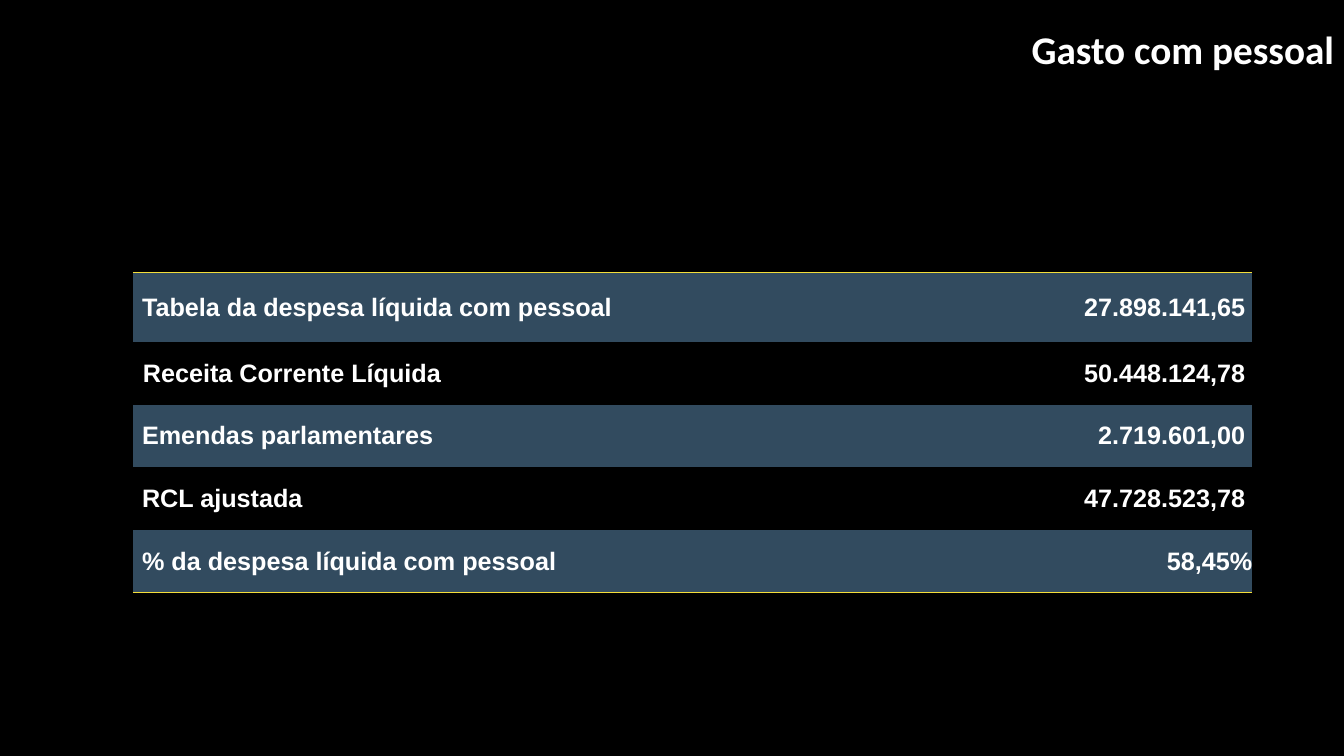
import pptx
import pptx.dml.color
import pptx.enum.text
import pptx.oxml
import pptx.oxml.ns
import pptx.util

Cm = pptx.util.Cm
ALIGN = pptx.enum.text.PP_ALIGN
MIDDLE = pptx.enum.text.MSO_ANCHOR.MIDDLE
COLORS = {"background": "000000", "text": "FFFFFF", "band": "324B5F", "rule": "F4DE3A"}
PLAIN_TABLE_STYLE = "{2D5ABB26-0587-4C30-8999-92F81FD0307C}"

# Label, value, left margin and right margin in centimetres
EXPENSE_ROWS = [
    ("Tabela da despesa líquida com pessoal", "27.898.141,65", 0.23, 0.18),
    ("Receita Corrente Líquida", "50.448.124,78", 0.25, 0.18),
    ("Emendas parlamentares", "2.719.601,00", 0.23, 0.18),
    ("RCL ajustada", "47.728.523,78", 0.23, 0.18),
    ("% da despesa líquida com pessoal", "58,45%", 0.23, 0),
]


def color(name):
    return pptx.dml.color.RGBColor.from_string(COLORS[name])


def write_text(frame, text, size=18, font="Arial", align=ALIGN.LEFT):
    paragraph = frame.paragraphs[0]
    paragraph.alignment = align
    run = paragraph.add_run()
    run.text = text
    run.font.size = pptx.util.Pt(size)
    run.font.name = font
    run.font.bold = True
    run.font.color.rgb = color("text")


class SlideBuilder:
    def __init__(self, presentation):
        self.slide = presentation.slides.add_slide(presentation.slide_layouts[5])
        background = self.slide.background.fill
        background.solid()
        background.fore_color.rgb = color("background")

    def title(self, text, left, top, width, height):
        shape = self.slide.shapes.title
        shape.left, shape.top = Cm(left), Cm(top)
        shape.width, shape.height = Cm(width), Cm(height)
        frame = shape.text_frame
        frame.word_wrap = True
        frame.auto_size = pptx.enum.text.MSO_AUTO_SIZE.NONE
        frame.vertical_anchor = MIDDLE
        write_text(frame, text, size=28, font="Calibri", align=ALIGN.RIGHT)

    def border(self, cell, side):
        namespace = pptx.oxml.ns.nsdecls("a")
        line = pptx.oxml.parse_xml(
            f'<a:{side} {namespace} w="12700"><a:solidFill>'
            f'<a:srgbClr val="{COLORS["rule"]}"/></a:solidFill></a:{side}>'
        )
        cell._tc.get_or_add_tcPr().insert(0, line)

    def cell(self, cell, text, banded, align, left=0, right=0):
        cell.margin_left, cell.margin_right = Cm(left), Cm(right)
        cell.margin_top = cell.margin_bottom = 0
        cell.vertical_anchor = MIDDLE
        if banded:
            cell.fill.solid()
            cell.fill.fore_color.rgb = color("band")
        else:
            cell.fill.background()
        write_text(cell.text_frame, text, align=align)

    def table(self, rows, left, top, column_widths, row_heights):
        table = self.slide.shapes.add_table(
            len(rows), len(column_widths), Cm(left), Cm(top),
            Cm(sum(column_widths)), Cm(sum(row_heights)),
        ).table
        table._tbl.tblPr.find(pptx.oxml.ns.qn("a:tableStyleId")).text = PLAIN_TABLE_STYLE
        for column, width in zip(table.columns, column_widths):
            column.width = Cm(width)
        for row, height in zip(table.rows, row_heights):
            row.height = Cm(height)

        # Every other row is banded
        for index, (label, value, left_margin, right_margin) in enumerate(rows):
            banded = index % 2 == 0
            self.cell(table.cell(index, 0), label, banded, ALIGN.LEFT, left=left_margin)
            self.cell(table.cell(index, 1), value, banded, ALIGN.RIGHT, right=right_margin)

        # Rules above the first row and below the last
        for column_index in range(len(column_widths)):
            self.border(table.cell(0, column_index), "lnT")
            self.border(table.cell(len(rows) - 1, column_index), "lnB")


def main():
    presentation = pptx.Presentation()
    presentation.slide_width, presentation.slide_height = Cm(33.87), Cm(19.05)
    builder = SlideBuilder(presentation)
    builder.title("Gasto com pessoal", 12.46, 0.51, 21.41, 1.45)
    builder.table(EXPENSE_ROWS, 3.35, 6.87, [19.54, 8.67], [1.75] + [1.58] * 4)
    presentation.save("out.pptx")


if __name__ == "__main__":
    main()
